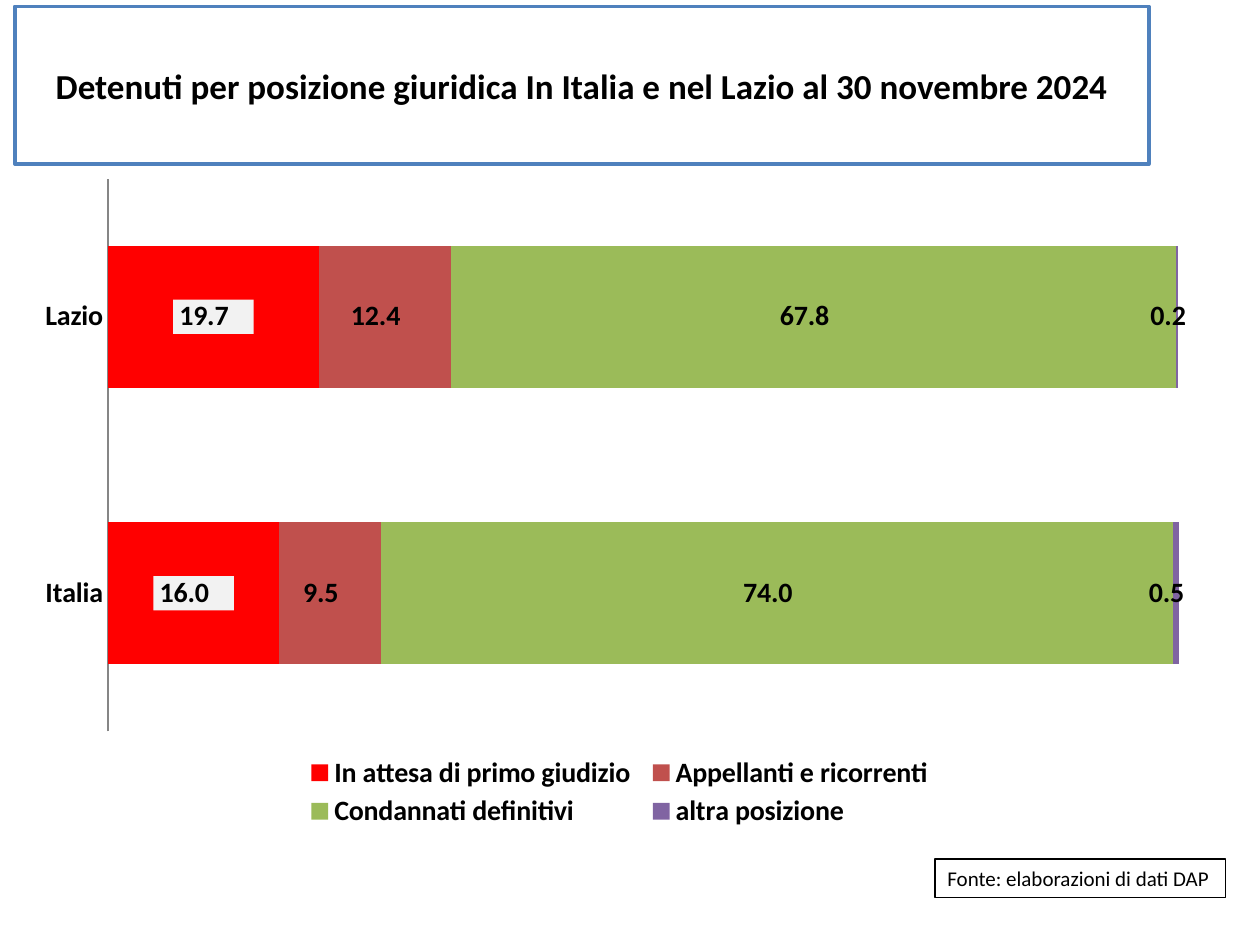
from lxml import etree
from pptx import Presentation
from pptx.chart.data import CategoryChartData
from pptx.dml.color import RGBColor
from pptx.enum.chart import XL_CHART_TYPE, XL_LEGEND_POSITION, XL_TICK_MARK
from pptx.enum.text import MSO_ANCHOR, PP_ALIGN
from pptx.oxml import parse_xml
from pptx.oxml.ns import nsdecls, qn
from pptx.util import Cm, Pt

STACKED = XL_CHART_TYPE.BAR_STACKED_100
BOTTOM = XL_LEGEND_POSITION.BOTTOM
NO_TICK = XL_TICK_MARK.NONE
MIDDLE = MSO_ANCHOR.MIDDLE
CENTER, LEFT = PP_ALIGN.CENTER, PP_ALIGN.LEFT

BLACK = RGBColor(0, 0, 0)
WHITE = RGBColor(255, 255, 255)
BLUE = RGBColor(0x4F, 0x81, 0xBD)
GRAY = RGBColor(0x86, 0x86, 0x86)
RED = RGBColor(255, 0, 0)
BRICK = RGBColor(0xC0, 0x50, 0x4D)
GREEN = RGBColor(0x9B, 0xBB, 0x59)
PURPLE = RGBColor(0x80, 0x64, 0xA2)
PALE = "F2F2F2"

FONT = "Calibri"
FORMAT = r"_-* #,##0.0\ _€_-;\-* #,##0.0\ _€_-"
TITLE = "Detenuti per posizione giuridica In Italia e nel Lazio al 30 novembre 2024"
SOURCE = "Fonte: elaborazioni di dati DAP"
PLACES = ["Lazio", "Italia"]
SERIES = [
    ("In attesa di primo giudizio", (19.7, 16.0), RED),
    ("Appellanti e ricorrenti", (12.4, 9.5), BRICK),
    ("Condannati definitivi", (67.8, 74.0), GREEN),
    ("altra posizione", (0.2, 0.5), PURPLE),
]


def style(font, size, bold):
    font.name, font.size, font.bold = FONT, Pt(size), bold
    font.color.rgb = BLACK


def add_box(slide, text, area, size, bold, align, edge, width):
    box = slide.shapes.add_textbox(*map(Cm, area))
    box.fill.solid()
    box.fill.fore_color.rgb = WHITE
    box.line.color.rgb = edge
    box.line.width = Pt(width)
    frame = box.text_frame
    frame.word_wrap = True
    frame.vertical_anchor = MIDDLE
    para = frame.paragraphs[0]
    para.text = text
    para.alignment = align
    style(para.font, size, bold)


def place(part, index, area, inner=False):
    """Fix a chart part at x, y, w, h, given as shares of the chart."""
    for old in part.findall(qn("c:layout")):
        part.remove(old)
    layout = parse_xml(f"<c:layout {nsdecls('c')}><c:manualLayout/></c:layout>")
    fields = [("layoutTarget", "inner")] if inner else []
    fields += [("xMode", "edge"), ("yMode", "edge"), *zip("xywh", area)]
    for tag, value in fields:
        etree.SubElement(layout[0], qn(f"c:{tag}")).set("val", str(value))
    part.insert(index, layout)


def add_bars(slide):
    data = CategoryChartData(number_format=FORMAT)
    data.categories = PLACES
    for name, values, _ in SERIES:
        data.add_series(name, values)
    area = map(Cm, (0.5, 3.33, 23.98, 13.59))
    chart = slide.shapes.add_chart(STACKED, *area, data).chart
    style(chart.font, 16, True)
    chart.has_title = False

    axis = chart.category_axis
    axis.reverse_order = True
    axis.major_tick_mark = axis.minor_tick_mark = NO_TICK
    axis.format.line.color.rgb = GRAY
    chart.value_axis.visible = False
    chart.value_axis.has_major_gridlines = False

    plot = chart.plots[0]
    plot.gap_width, plot.overlap = 95, 100
    plot.vary_by_categories = False
    for bar, (_, _, color) in zip(plot.series, SERIES):
        bar.format.fill.solid()
        bar.format.fill.fore_color.rgb = color
        labels = bar.data_labels
        labels.show_value = True
        labels.number_format = FORMAT
        labels.number_format_is_linked = False
        style(labels.font, 16, True)

    first = plot.series[0].data_labels
    first._element.find(qn("c:numFmt")).addnext(parse_xml(
        f"<c:spPr {nsdecls('c', 'a')}><a:solidFill>"
        f'<a:srgbClr val="{PALE}"/></a:solidFill></c:spPr>'))

    chart.has_legend = True
    legend = chart.legend
    legend.position = BOTTOM
    legend.include_in_layout = False
    style(legend.font, 16, True)
    place(legend._element, 1, (0.23, 0.87, 0.54, 0.12))
    body = chart._chartSpace.chart.plotArea
    place(body, 0, (0.07, 0.02, 0.9, 0.82), inner=True)


def main():
    deck = Presentation()
    deck.slide_width, deck.slide_height = Cm(25.4), Cm(19.05)
    slide = deck.slides.add_slide(deck.slide_layouts[6])
    add_box(slide, TITLE, (0.3, 0.13, 22.86, 3.18), 20, True, CENTER, BLUE, 2)
    add_box(slide, SOURCE, (18.85, 17.32, 5.85, 0.77), 12, False, LEFT, BLACK, 0.75)
    add_bars(slide)
    deck.save("out.pptx")


if __name__ == "__main__":
    main()
